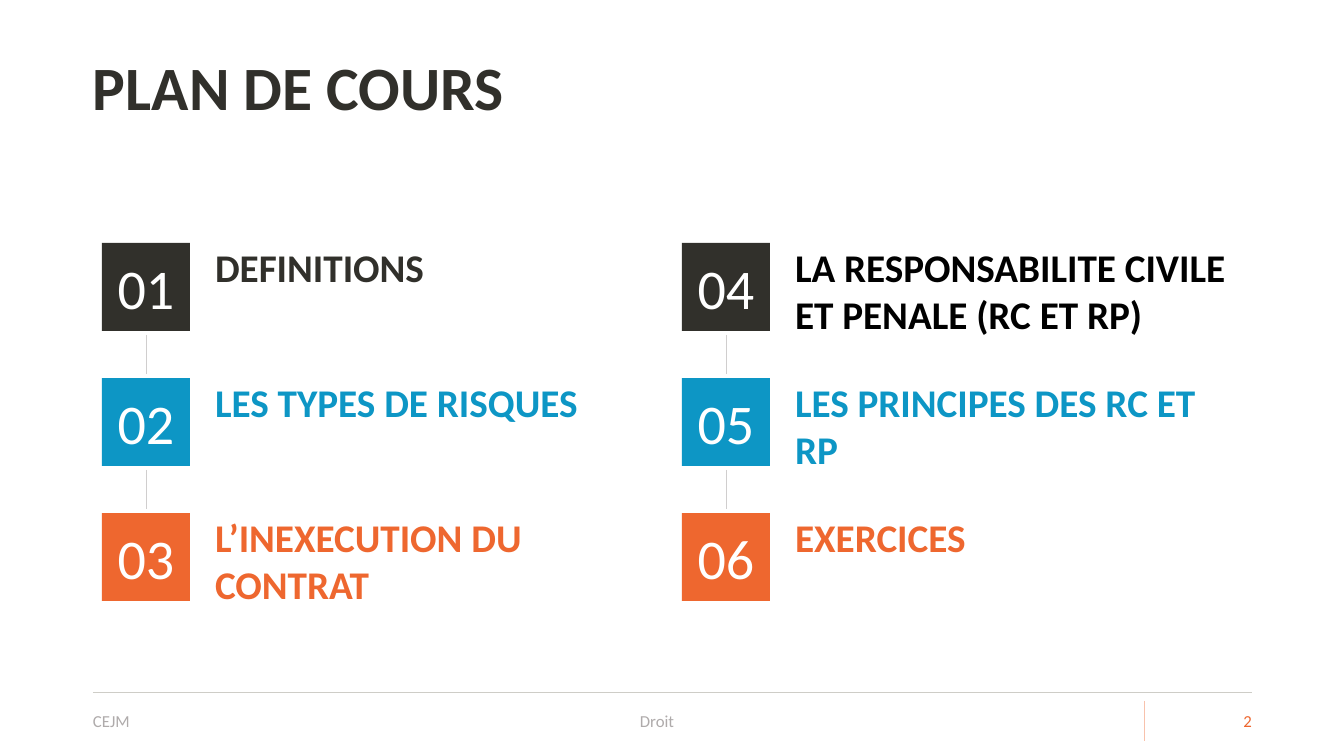
from lxml.etree import SubElement
from pptx import Presentation
from pptx.dml.color import RGBColor
from pptx.enum.shapes import MSO_CONNECTOR, MSO_SHAPE
from pptx.enum.text import MSO_ANCHOR, MSO_AUTO_SIZE, PP_ALIGN
from pptx.oxml.ns import qn
from pptx.util import Pt

EMU_PER_PX = 914400 / 100.8
DARK, BLUE, ORANGE = "31302B", "0D96C5", "EE672F"
WHITE, BLACK, GREY = "FFFFFF", "000000", "AFABAB"
SQUARE, ROW_STEP, COLUMN_STEP = 88, 135, 580
LINK_GAP = 4

PLAN = [
    [("DEFINITIONS", DARK, DARK),
     ("LES TYPES DE RISQUES", BLUE, BLUE),
     ("L’INEXECUTION DU CONTRAT", ORANGE, ORANGE)],
    [("LA RESPONSABILITE CIVILE ET PENALE (RC ET RP)", DARK, BLACK),
     ("LES PRINCIPES DES RC ET RP", BLUE, BLUE),
     ("EXERCICES", ORANGE, ORANGE)],
]


def px(*lengths):
    return [round(n * EMU_PER_PX) for n in lengths]


def color(value):
    return RGBColor.from_string(value)


def write(sp, text, size, fill, bold=False, align=PP_ALIGN.LEFT,
          anchor=MSO_ANCHOR.MIDDLE, insets=(10, 5, 10, 5), spacing=None):
    """Fill a shape with one formatted paragraph; insets run left, top, right, bottom."""
    tf = sp.text_frame
    tf.word_wrap = True
    tf.auto_size = MSO_AUTO_SIZE.NONE
    tf.vertical_anchor = anchor
    tf.margin_left, tf.margin_top, tf.margin_right, tf.margin_bottom = px(*insets)
    p = tf.paragraphs[0]
    p.alignment = align
    p.line_spacing = spacing
    r = p.add_run()
    r.text = text
    r.font.name = "Calibri"
    r.font.size = Pt(size)
    r.font.bold = bold
    r.font.color.rgb = color(fill)


def add_text(s, box, text, size, fill, **fmt):
    write(s.shapes.add_textbox(*px(*box)), text, size, fill, **fmt)


def add_line(s, x1, y1, x2, y2, stroke):
    line = s.shapes.add_connector(MSO_CONNECTOR.STRAIGHT, *px(x1, y1, x2, y2))
    line.line.color.rgb = color(stroke)
    line.line.width = Pt(0.5)
    SubElement(line._element.spPr, qn("a:effectLst"))


def add_title(s, box, text):
    title = s.shapes.title
    title.left, title.top, title.width, title.height = px(*box)
    write(title, text, 44, DARK, bold=True, insets=(0, 5, 10, 5), spacing=0.9)


def add_plan_item(s, x, y, number, text, square_fill, text_fill):
    """Place a numbered square with its heading on the right."""
    sp = s.shapes.add_shape(MSO_SHAPE.RECTANGLE, *px(x, y, SQUARE, SQUARE))
    sp.shadow.inherit = False
    sp.fill.solid()
    sp.fill.fore_color.rgb = color(square_fill)
    sp.line.fill.background()
    write(sp, f"{number:02d}", 40, WHITE, align=PP_ALIGN.CENTER)
    add_text(s, (x + SQUARE + 15, y, 465, 95), text, 28, text_fill, bold=True,
             anchor=MSO_ANCHOR.TOP, insets=(10, 0, 10, 0))


def add_plan_column(s, x, y, first_number, items):
    for row, item in enumerate(items):
        top = y + row * ROW_STEP
        add_plan_item(s, x, top, first_number + row, *item)
        if row:
            middle = x + SQUARE // 2
            add_line(s, middle, top - ROW_STEP + SQUARE + LINK_GAP,
                     middle, top - LINK_GAP, "D0CECE")


def add_footer(s, x, y, width):
    """Place the rule, the three footer texts and the divider before the page number."""
    right, top, height = x + width, y + 9, 40
    add_line(s, x, y, right, y, "CECDC7")
    add_line(s, right - 108, top, right - 108, top + height, "F8C2AC")
    add_text(s, (x, top, 143, height), "CEJM", 12, GREY, insets=(0, 5, 0, 5))
    add_text(s, (x + 198, top, 762, height), "Droit", 12, GREY,
             align=PP_ALIGN.CENTER, insets=(10, 5, 40, 5))
    add_text(s, (right - 96, top, 96, height), "2", 12, ORANGE,
             align=PP_ALIGN.RIGHT, insets=(0, 5, 0, 5))


def main():
    prs = Presentation()
    prs.slide_width, prs.slide_height = px(1344, 756)
    s = prs.slides.add_slide(prs.slide_layouts[5])
    add_title(s, (93, 18, 1055, 146), "PLAN DE COURS")
    for column, items in enumerate(PLAN):
        add_plan_column(s, 102 + column * COLUMN_STEP, 243,
                        1 + column * len(items), items)
    add_footer(s, 93, 692, 1159)
    prs.save("out.pptx")


if __name__ == "__main__":
    main()
